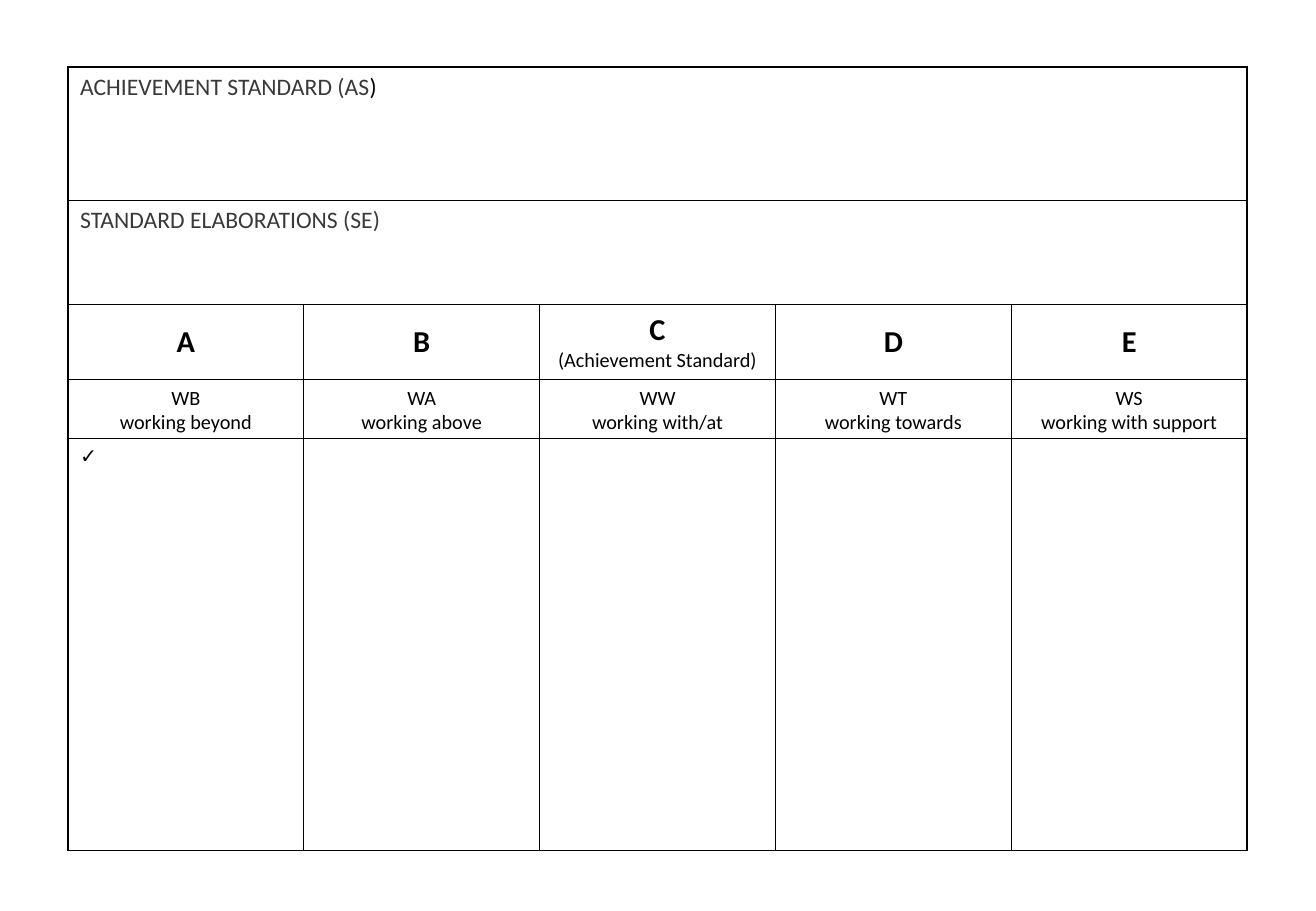
import pptx
import pptx.util
import pptx.dml.color
import pptx.enum.text
import pptx.oxml
import pptx.oxml.ns
from pptx.util import Cm

BLACK = pptx.dml.color.RGBColor(0x00, 0x00, 0x00)
GREY = pptx.dml.color.RGBColor(0x3B, 0x38, 0x38)
FONT = "Calibri"

COLUMN_WIDTH = 4.93
ROW_HEIGHTS = [2.79, 2.18, 1.57, 1.23, 8.61]
GRADES = ["A", "B", "C\n(Achievement Standard)", "D", "E"]
LEVELS = [
    "WB\nworking beyond",
    "WA\nworking above",
    "WW\nworking with/at",
    "WT\nworking towards",
    "WS\nworking with support",
]


def format_run(r, size, color=BLACK, bold=False):
    r.font.name = FONT
    r.font.size = pptx.util.Pt(size)
    r.font.bold = bold
    r.font.color.rgb = color


def add_borders(cell):
    tcPr = cell._tc.get_or_add_tcPr()
    for side in ("lnL", "lnR", "lnT", "lnB"):
        tcPr.append(pptx.oxml.parse_xml(
            f'<a:{side} {pptx.oxml.ns.nsdecls("a")} w="12700">'
            f'<a:solidFill><a:srgbClr val="{BLACK}"/></a:solidFill></a:{side}>'))


def add_grid(slide):
    rows, cols = len(ROW_HEIGHTS), len(GRADES)
    frame = slide.shapes.add_table(
        rows, cols, Cm(1.42), Cm(1.4),
        Cm(COLUMN_WIDTH * cols), Cm(sum(ROW_HEIGHTS)))
    table = frame.table
    table.first_row = False
    table.horz_banding = False
    for column in table.columns:
        column.width = Cm(COLUMN_WIDTH)
    for row, height in zip(table.rows, ROW_HEIGHTS):
        row.height = Cm(height)
    for cell in table.iter_cells():
        add_borders(cell)
        cell.fill.background()
    return table


def fill_banner(table, row, parts):
    """Merge a whole row and write (text, colour) parts in it."""
    cell = table.cell(row, 0)
    cell.merge(table.cell(row, len(table.columns) - 1))
    p = cell.text_frame.paragraphs[0]
    for text, color in parts:
        r = p.add_run()
        r.text = text
        format_run(r, 14, color)


def fill_centred(cell, text, first_size, bold_first):
    tf = cell.text_frame
    tf.text = text
    for i, p in enumerate(tf.paragraphs):
        p.alignment = pptx.enum.text.PP_ALIGN.CENTER
        format_run(p.runs[0], 12 if i else first_size,
                   bold=bold_first and i == 0)


def main():
    prs = pptx.Presentation()
    prs.slide_width = Cm(27.51)
    prs.slide_height = Cm(19.05)
    slide = prs.slides.add_slide(prs.slide_layouts[6])
    table = add_grid(slide)

    # Full-width headings
    fill_banner(table, 0, [("ACHIEVEMENT STANDARD (AS", GREY), (")", BLACK)])
    fill_banner(table, 1, [("STANDARD ELABORATIONS (SE)", GREY)])

    # Grades and the levels under them
    for col, (grade, level) in enumerate(zip(GRADES, LEVELS)):
        grade_cell = table.cell(2, col)
        grade_cell.vertical_anchor = pptx.enum.text.MSO_ANCHOR.MIDDLE
        fill_centred(grade_cell, grade, 18, True)
        level_cell = table.cell(3, col)
        level_cell.margin_bottom = 0
        fill_centred(level_cell, level, 12, False)

    # First check mark of the list to fill in
    tf = table.cell(4, 0).text_frame
    tf.text = "✓"
    format_run(tf.paragraphs[0].runs[0], 12)

    prs.save("out.pptx")


if __name__ == "__main__":
    main()
